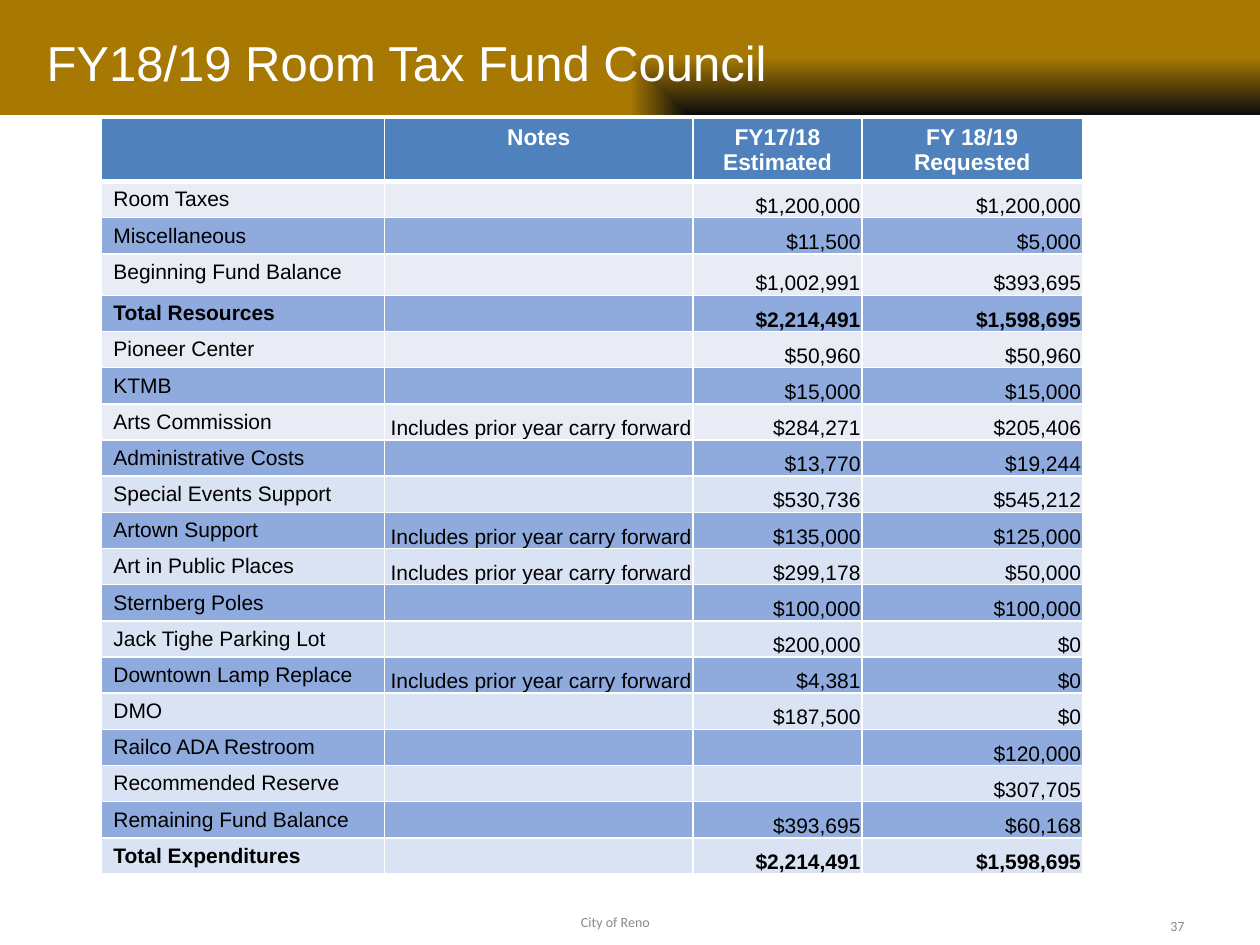
from lxml.etree import SubElement as Sub
from pptx import Presentation
from pptx.dml.color import RGBColor as RGB
from pptx.enum.shapes import MSO_SHAPE as Shape
from pptx.enum.text import MSO_ANCHOR as Anchor, PP_ALIGN as Align
from pptx.oxml import parse_xml
from pptx.oxml.ns import nsdecls, qn
from pptx.util import Inches, Pt

TITLE = "FY18/19 Room Tax Fund Council"
NOTE = "Includes prior year carry forward"
HEAD = ("", "Notes", "FY17/18 Estimated", "FY 18/19 Requested")
ROWS = [
    ("Room Taxes", "", "$1,200,000", "$1,200,000"),
    ("Miscellaneous", "", "$11,500", "$5,000"),
    ("Beginning Fund Balance", "", "$1,002,991", "$393,695"),
    ("Total Resources", "", "$2,214,491", "$1,598,695"),
    ("Pioneer Center", "", "$50,960", "$50,960"),
    ("KTMB", "", "$15,000", "$15,000"),
    ("Arts Commission", NOTE + " ", "$284,271", "$205,406"),
    ("Administrative Costs", "", "$13,770", "$19,244"),
    ("Special Events Support", "", "$530,736", "$545,212"),
    ("Artown Support", NOTE, "$135,000", "$125,000"),
    ("Art in Public Places", NOTE, "$299,178", "$50,000"),
    ("Sternberg Poles", "", "$100,000", "$100,000"),
    ("Jack Tighe Parking Lot", "", "$200,000", "$0"),
    ("Downtown Lamp Replace", NOTE, "$4,381", "$0"),
    ("DMO", "", "$187,500", "$0"),
    ("Railco ADA Restroom", "", "", "$120,000"),
    ("Recommended Reserve", "", "", "$307,705"),
    ("Remaining Fund Balance", "", "$393,695", "$60,168"),
    ("Total Expenditures", "", "$2,214,491", "$1,598,695"),
]
FOOT = [
    ("City of Reno", (3.3, 7.12, 3.17, 0.4), Align.CENTER),
    ("37", (7.17, 7.15, 2.33, 0.4), Align.RIGHT),
]
COLS = (2.25, 2.45, 1.34, 1.75)
TABLE_H, HEAD_H, TALL_H, TALL = 6, 0.5, 0.33, 3
SHIFT = 8
ROOMY, TIGHT = (0.1, 0.05, 0.1, 0.01), (0.01, 0.01, 0.01, 0)

THEME = {
    "font": "Arial", "small": "Calibri",
    "title": 28, "head": 13, "body": 12, "foot": 8,
    "white": "FFFFFF", "ink": "000000", "grey": "898989",
    "gold": "A77903", "dark": "0C0C0C",
    "blue": "4F81BD", "band": "8FAADC", "pale": "E9ECF4", "mist": "DAE3F3",
}


def box(*sides):
    return [Inches(side) for side in sides]


def style(par, size, ink, face="font", bold=False):
    for run in par.runs:
        font = run.font
        font.name, font.size, font.bold = THEME[face], Pt(THEME[size]), bold
        font.color.rgb = RGB.from_string(THEME[ink])


def edge(cell, base):
    prop = cell._tc.get_or_add_tcPr()
    for side in "LRTB":
        wide = 3 if side == base else 1
        line = Sub(prop, qn(f"a:ln{side}"), w=str(Pt(wide)))
        Sub(Sub(line, qn("a:solidFill")), qn("a:srgbClr"), val=THEME["white"])


def fill_cell(cell, text, row, col):
    head = row == 0
    size = "head" if head else "body"
    edge(cell, {0: "B", 1: "T"}.get(row))
    light = "pale" if row <= SHIFT else "mist"
    tone = "blue" if head else light if row % 2 else "band"
    cell.fill.solid()
    cell.fill.fore_color.rgb = RGB.from_string(THEME[tone])
    value = not head and col > 0
    pads = box(*(TIGHT if value else ROOMY))
    cell.margin_left, cell.margin_top, cell.margin_right, cell.margin_bottom = pads
    cell.vertical_anchor = Anchor.BOTTOM if value else Anchor.TOP
    cell.text_frame.text = text
    par = cell.text_frame.paragraphs[0]
    par.alignment = Align.CENTER if head else Align.RIGHT if value else Align.LEFT
    bold = head or ROWS[row - 1][0].startswith("Total")
    style(par, size, "white" if head else "ink", bold=bold)
    if not text:
        Sub(par._p, qn("a:endParaRPr"), sz=str(THEME[size] * 100))


def add_band(slide):
    band = slide.shapes.add_shape(Shape.RECTANGLE, *box(0, 0, 10, 0.91))
    band.shadow.inherit = False
    band.line.fill.background()
    grad = parse_xml(
        f'<a:gradFill {nsdecls("a")} rotWithShape="1"><a:gsLst>'
        f'<a:gs pos="0"><a:srgbClr val="{THEME["dark"]}"/></a:gs>'
        f'<a:gs pos="100000"><a:srgbClr val="{THEME["gold"]}"/></a:gs></a:gsLst>'
        '<a:path path="rect"><a:fillToRect l="100000" t="100000"/></a:path>'
        '</a:gradFill>')
    band._element.spPr.find(qn("a:prstGeom")).addnext(grad)
    slide.shapes._spTree.insert(2, band._element)


def add_title(slide):
    title = slide.shapes.title
    title.left, title.top, title.width, title.height = box(0.27, 0, 9.23, 0.99)
    frame = title.text_frame
    frame.text, frame.vertical_anchor = TITLE, Anchor.MIDDLE
    par = frame.paragraphs[0]
    par.alignment = Align.LEFT
    prop = par._p.get_or_add_pPr()
    prop.set("marL", str(Inches(0.5)))
    prop.set("indent", str(Inches(-0.5)))
    style(par, "title", "white")


def add_foot(slide, text, place, align):
    frame = slide.shapes.add_textbox(*box(*place)).text_frame
    frame.word_wrap, frame.vertical_anchor = True, Anchor.MIDDLE
    frame.text = text
    frame.paragraphs[0].alignment = align
    style(frame.paragraphs[0], "foot", "grey", "small")


def add_budget(slide):
    data = [HEAD, *ROWS]
    row_h = (TABLE_H - HEAD_H - TALL_H) / (len(ROWS) - 1)
    tall = [HEAD_H] + [row_h] * len(ROWS)
    tall[TALL] = TALL_H
    place = box(0.8, 0.94, sum(COLS), TABLE_H)
    table = slide.shapes.add_table(len(data), len(COLS), *place).table
    table.horz_banding = False
    for col, wide in zip(table.columns, COLS):
        col.width = Inches(wide)
    for r, line in enumerate(data):
        table.rows[r].height = Inches(tall[r])
        for c, text in enumerate(line):
            fill_cell(table.cell(r, c), text, r, c)


def main():
    deck = Presentation()
    deck.slide_width, deck.slide_height = box(10, 7.5)
    slide = deck.slides.add_slide(deck.slide_layouts[5])
    add_band(slide)
    add_title(slide)
    for item in FOOT:
        add_foot(slide, *item)
    add_budget(slide)
    deck.save("out.pptx")


if __name__ == "__main__":
    main()
